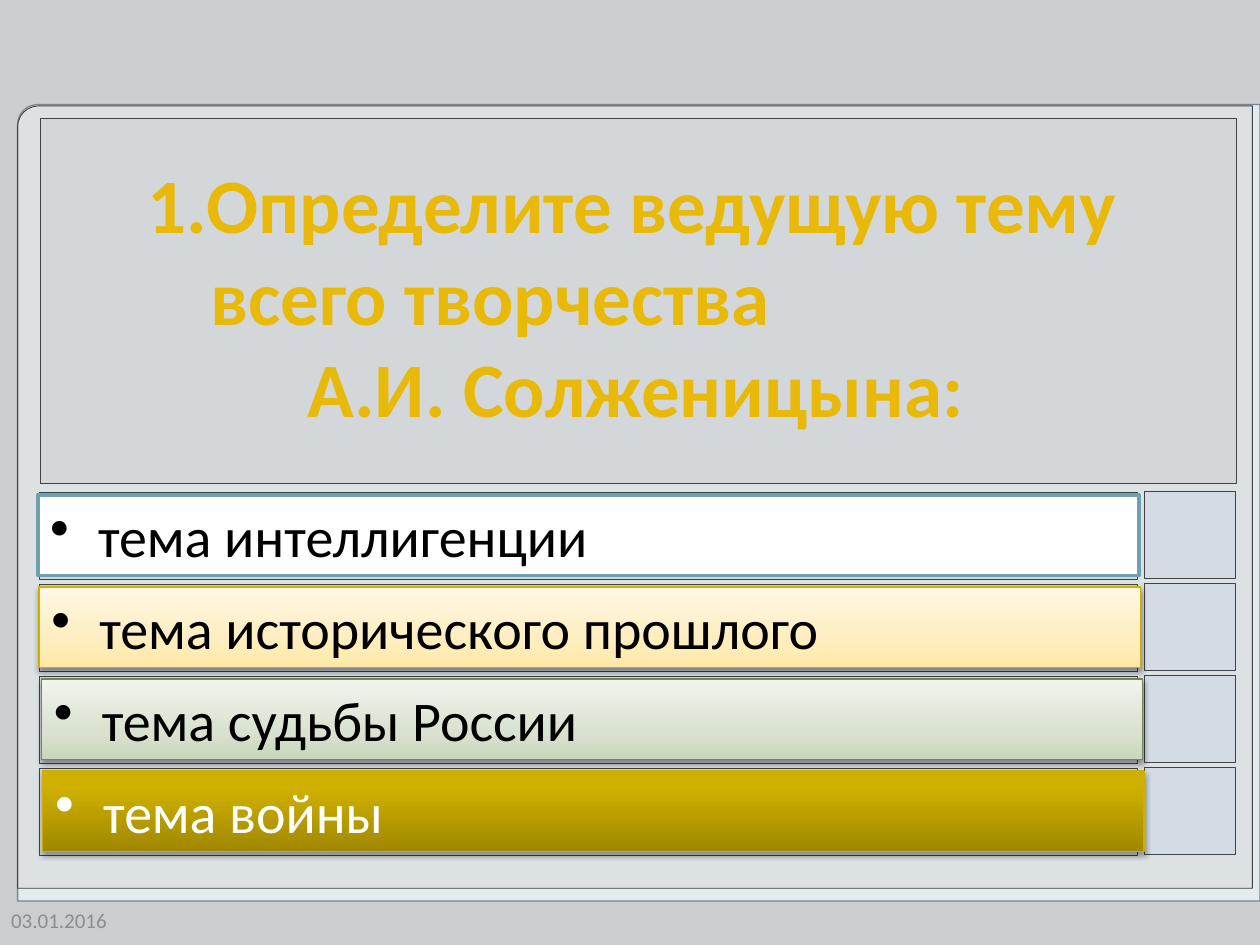
"""Builds a quiz slide: a question panel above four answer bars with score cells."""
from dataclasses import dataclass
from typing import Optional

from lxml import etree
from pptx import Presentation
from pptx.dml.color import RGBColor
from pptx.enum.shapes import MSO_SHAPE
from pptx.enum.text import MSO_ANCHOR, PP_ALIGN
from pptx.oxml.ns import qn
from pptx.util import Inches, Length, Pt

RECT = MSO_SHAPE.RECTANGLE
ROUND_ONE = MSO_SHAPE.ROUND_1_RECTANGLE
SNIP_ROUND = MSO_SHAPE.SNIP_ROUND_RECTANGLE
LEFT, MIDDLE, TOP = PP_ALIGN.LEFT, MSO_ANCHOR.MIDDLE, MSO_ANCHOR.TOP

COLS, ROWS = 100, 75
WIDTH, HEIGHT = Inches(10), Inches(7.5)
FIRST_ROW, ROW_STEP = 39.1, 7.3
FONT = "Calibri"
COLORS = {
    "back": "CBCED1", "sheet": "E2ECEF", "sheet_edge": "7E848D",
    "card": "D8D8D8", "edge": "3F4247", "cell": "CCD8E7",
    "title": "E9B90A", "date": "8C8C8C", "black": "000000",
    "white": "FFFFFF", "blue": "6EA0B0", "gold": "CCAE05", "green": "72835D",
}


@dataclass(frozen=True)
class Box:
    x: float
    y: float
    w: float
    h: float

    def emu(self) -> tuple[int, int, int, int]:
        cw, rh = WIDTH / COLS, HEIGHT / ROWS
        return int(self.x * cw), int(self.y * rh), int(self.w * cw), int(self.h * rh)


@dataclass(frozen=True)
class Panel:
    box: Box
    fill: str
    line: str = "edge"
    width: float = 0.5
    alpha: Optional[int] = 50
    kind: MSO_SHAPE = RECT
    adjust: tuple[float, ...] = ()
    flip: bool = False
    rotation: int = 0


@dataclass(frozen=True)
class Answer:
    text: str
    x: float
    line: str
    width: float = 0.75
    color: str = "black"
    stops: tuple[tuple[int, str], ...] = ()
    shadow: int = 0


def rgb(name: str) -> RGBColor:
    return RGBColor.from_string(COLORS[name])


def add(parent, tag: str, **attrs):
    return etree.SubElement(parent, qn(tag), {k: str(v) for k, v in attrs.items()})


def draw_panel(shapes, panel: Panel):
    sp = shapes.add_shape(panel.kind, *panel.box.emu())
    sp.shadow.inherit = False
    sp.rotation = panel.rotation
    for i, value in enumerate(panel.adjust):
        sp.adjustments[i] = value
    if panel.flip:
        sp._element.spPr.find(qn("a:xfrm")).set("flipH", "1")
    sp.fill.solid()
    sp.fill.fore_color.rgb = rgb(panel.fill)
    if panel.alpha is not None:
        color = sp._element.spPr.find(f"{qn('a:solidFill')}/{qn('a:srgbClr')}")
        add(color, "a:alpha", val=panel.alpha * 1000)
    sp.line.color.rgb = rgb(panel.line)
    sp.line.width = Pt(panel.width)
    return sp


def set_gradient(sp, stops: tuple[tuple[int, str], ...]) -> None:
    sp.fill.gradient()
    sp.fill.gradient_angle = 90
    gs_list = sp._element.spPr.find(f"{qn('a:gradFill')}/{qn('a:gsLst')}")
    for gs in list(gs_list):
        gs_list.remove(gs)
    for pos, color in stops:
        add(add(gs_list, "a:gs", pos=pos * 1000), "a:srgbClr", val=color)


def set_shadow(sp, alpha: int) -> None:
    effects = sp._element.spPr.find(qn("a:effectLst"))
    shadow = add(effects, "a:outerShdw", blurRad=Pt(3.1), dist=Pt(1.6),
                 dir=5400000, rotWithShape=0)
    add(add(shadow, "a:srgbClr", val=COLORS["black"]), "a:alpha", val=alpha * 1000)


def set_indent(p, margin: Length, indent: Length = Length(0)) -> None:
    p_pr = p._p.get_or_add_pPr()
    p_pr.set("marL", str(margin))
    p_pr.set("indent", str(indent))


def style(p, size: float, color: str, bold: bool = False) -> None:
    p.alignment = LEFT
    p.font.name, p.font.size, p.font.bold = FONT, Pt(size), bold
    p.font.color.rgb = rgb(color)


def draw_answer(shapes, row: int, answer: Answer) -> None:
    box = Box(answer.x, FIRST_ROW + 0.2 + row * ROW_STEP, 87.4, 6.4)
    sp = draw_panel(shapes, Panel(box, "white", answer.line, answer.width, None))
    if answer.stops:
        set_gradient(sp, answer.stops)
        set_shadow(sp, answer.shadow)
    tf = sp.text_frame
    tf.word_wrap, tf.vertical_anchor = True, TOP
    p = tf.paragraphs[0]
    p.text = answer.text
    style(p, 32, answer.color)
    set_indent(p, Inches(0.38), Inches(-0.38))
    p_pr = p._p.get_or_add_pPr()
    bullet = etree.Element(qn("a:buChar"), char="•")
    p_pr.find(qn("a:defRPr")).addprevious(bullet)


def draw_text(shapes, box: Box, anchor: MSO_ANCHOR):
    tf = shapes.add_textbox(*box.emu()).text_frame
    tf.word_wrap, tf.vertical_anchor = True, anchor
    return tf


BACKDROP = (
    Panel(Box(19.1, -9.4, 63.2, 98.6), "sheet", "sheet_edge", 0.75, None,
          SNIP_ROUND, (0.025, 0), True, 270),
    Panel(Box(1.4, 8.4, 98, 62.1), "card", kind=ROUND_ONE, adjust=(0.027,), flip=True),
    Panel(Box(3.2, 9.4, 94.9, 29), "back"),
)
ANSWERS = (
    Answer("тема интеллигенции", 3, "blue", 2),
    Answer("тема исторического прошлого", 3.1, "gold", shadow=38,
           stops=((0, "FFE7A5"), (35, "FFEDBF"), (100, "FFF8E7"))),
    Answer("тема судьбы России", 3.3, "green", shadow=38,
           stops=((0, "C9D7BC"), (35, "D9E2D0"), (100, "F1F4ED"))),
    Answer("тема войны", 3.4, "gold", color="white", shadow=35,
           stops=((0, "A08800"), (80, "CFB000"), (100, "D0B100"))),
)
QUESTION = (
    ("1.Определите ведущую тему всего творчества", 1.02, -0.5),
    ("А.И. Солженицына:", 1.79, 0),
)


def main() -> None:
    prs = Presentation()
    prs.slide_width, prs.slide_height = WIDTH, HEIGHT
    s = prs.slides.add_slide(prs.slide_layouts[6])
    s.background.fill.solid()
    s.background.fill.fore_color.rgb = rgb("back")
    for panel in BACKDROP:
        draw_panel(s.shapes, panel)
    for row in range(len(ANSWERS)):
        y = FIRST_ROW + row * ROW_STEP
        draw_panel(s.shapes, Panel(Box(3.15, y, 87.1, 6.9), "back"))
        draw_panel(s.shapes, Panel(Box(90.8, y - 0.1, 7.3, 6.9), "cell"))
    p = draw_text(s.shapes, Box(-0.1, 71, 11.7, 4), MIDDLE).paragraphs[0]
    p.text = "03.01.2016"
    style(p, 12, "date")
    for row, answer in enumerate(ANSWERS):
        draw_answer(s.shapes, row, answer)
    tf = draw_text(s.shapes, Box(5.5, 11.9, 88.7, 23.2), TOP)
    for i, (text, margin, indent) in enumerate(QUESTION):
        p = tf.add_paragraph() if i else tf.paragraphs[0]
        p.text = text
        style(p, 44, "title", True)
        set_indent(p, Inches(margin), Inches(indent))
    prs.save("out.pptx")


if __name__ == "__main__":
    main()
